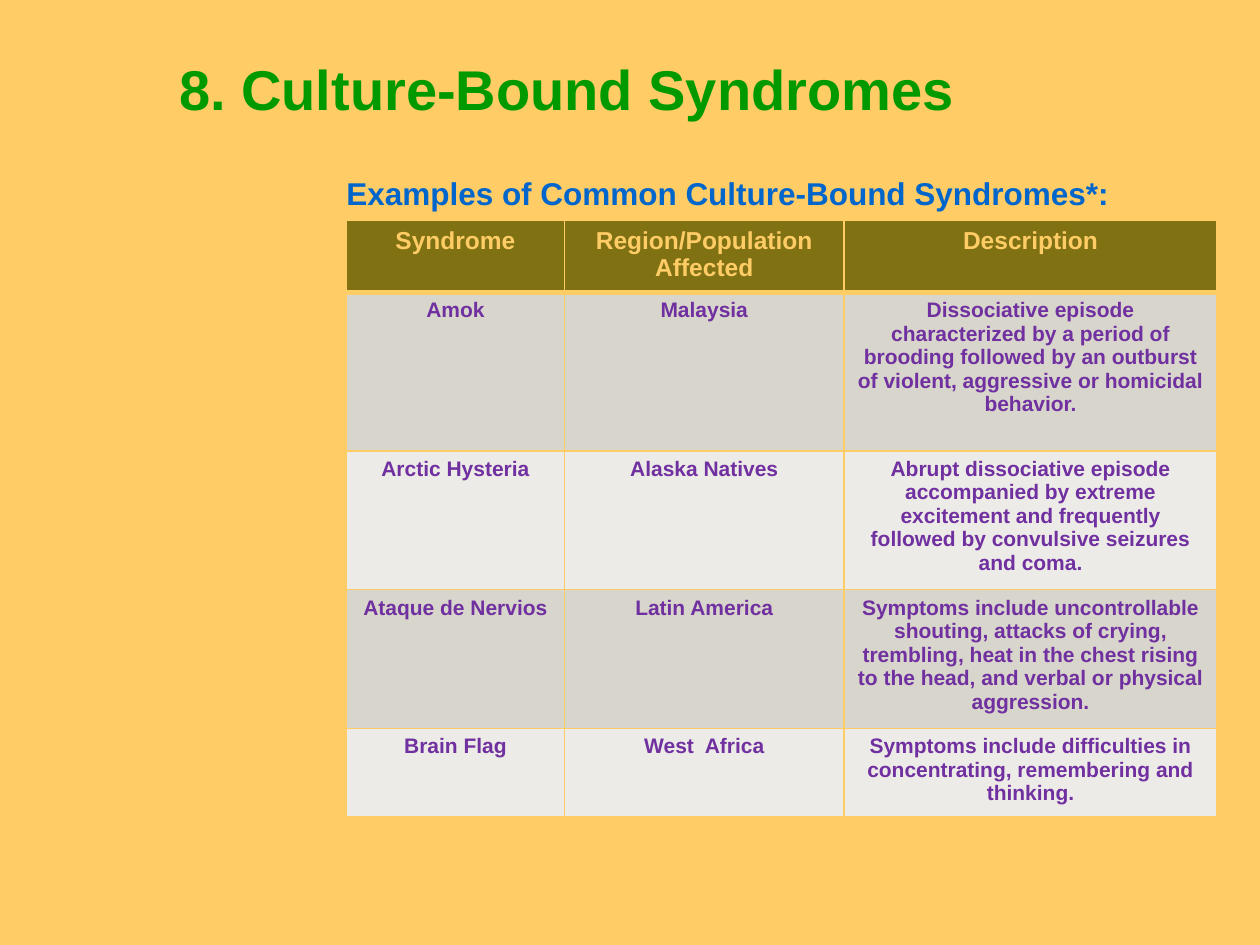
from lxml.etree import SubElement
from pptx import Presentation
from pptx.dml.color import RGBColor
from pptx.enum.text import MSO_ANCHOR, PP_ALIGN
from pptx.oxml.ns import qn
from pptx.util import Inches, Pt

BACKGROUND = "FFCC66"
HEADER_FILL = "807113"
BAND_FILLS = ["D8D5CC", "EDEBE7"]

TITLE_FORMAT = {"size": Pt(32), "color": "009900"}
CAPTION_FORMAT = {"size": Pt(18), "color": "0066CC"}
HEADER_FORMAT = {"size": Pt(14), "color": BACKGROUND}
BODY_FORMAT = {"size": Pt(12), "color": "7030A0"}

COLUMN_WIDTHS = [1.73, 2.22, 2.96]
ROW_HEIGHTS = [0.57, 1.26, 1.1, 1.1, 0.69]
SYNDROMES = [
    ("Syndrome", "Region/Population Affected", "Description"),
    ("Amok", "Malaysia",
     "Dissociative episode characterized by a period of brooding followed by "
     "an outburst of violent, aggressive or homicidal behavior."),
    ("Arctic Hysteria", "Alaska Natives",
     "Abrupt dissociative episode accompanied by extreme excitement and "
     "frequently followed by convulsive seizures and coma."),
    ("Ataque de Nervios", "Latin America",
     "Symptoms include uncontrollable shouting, attacks of crying, trembling, "
     "heat in the chest rising to the head, and verbal or physical aggression."),
    ("Brain Flag", "West  Africa",
     "Symptoms include difficulties in concentrating, remembering and thinking."),
]


def paint(color_format, hex_color):
    color_format.rgb = RGBColor.from_string(hex_color)


def fill_solid(fill, hex_color):
    fill.solid()
    paint(fill.fore_color, hex_color)


def write(frame, text, text_format, align):
    frame.text = text
    frame.word_wrap = True
    paragraph = frame.paragraphs[0]
    paragraph.alignment = align
    font = paragraph.runs[0].font
    for name, value in {"name": "Arial", "bold": True, **text_format}.items():
        if name == "color":
            paint(font.color, value)
        else:
            setattr(font, name, value)


def add_borders(cell, widths):
    properties = cell._tc.get_or_add_tcPr()
    for side, width in widths.items():
        line = SubElement(properties, qn(f"a:ln{side}"), w=str(Pt(width)))
        solid = SubElement(line, qn("a:solidFill"))
        SubElement(solid, qn("a:srgbClr"), val=BACKGROUND)


def add_title(slide):
    title = slide.shapes.title
    place = {"left": 0.25, "top": 0.33, "width": 8.5, "height": 0.77}
    for name, value in place.items():
        setattr(title, name, Inches(value))
    frame = title.text_frame
    write(frame, "8. Culture-Bound Syndromes", TITLE_FORMAT, PP_ALIGN.CENTER)
    frame.vertical_anchor = MSO_ANCHOR.TOP
    frame.margin_top = Inches(0.1)


def add_caption(slide):
    caption = slide.shapes.add_textbox(
        Inches(2.65), Inches(1.33), Inches(6.55), Inches(0.4))
    write(caption.text_frame, "Examples of Common Culture-Bound Syndromes*:",
          CAPTION_FORMAT, PP_ALIGN.LEFT)


def add_syndrome_table(slide):
    table = slide.shapes.add_table(
        len(SYNDROMES), len(COLUMN_WIDTHS), Inches(2.75), Inches(1.75),
        Inches(sum(COLUMN_WIDTHS)), Inches(sum(ROW_HEIGHTS))).table
    for column, width in zip(table.columns, COLUMN_WIDTHS):
        column.width = Inches(width)
    for row, height in zip(table.rows, ROW_HEIGHTS):
        row.height = Inches(height)

    for r, entries in enumerate(SYNDROMES):
        is_header = r == 0
        fill = HEADER_FILL if is_header else BAND_FILLS[(r - 1) % 2]
        # The rule under the header is thicker than the others
        borders = {"L": 1, "R": 1, "T": 3 if r == 1 else 1,
                   "B": 3 if is_header else 1}
        for c, entry in enumerate(entries):
            cell = table.cell(r, c)
            write(cell.text_frame, entry,
                  HEADER_FORMAT if is_header else BODY_FORMAT, PP_ALIGN.CENTER)
            add_borders(cell, borders)
            fill_solid(cell.fill, fill)


def main():
    deck = Presentation()
    deck.slide_width, deck.slide_height = Inches(10), Inches(7.5)
    slide = deck.slides.add_slide(deck.slide_layouts[5])
    fill_solid(slide.background.fill, BACKGROUND)
    add_title(slide)
    add_caption(slide)
    add_syndrome_table(slide)
    deck.save("out.pptx")


if __name__ == "__main__":
    main()
